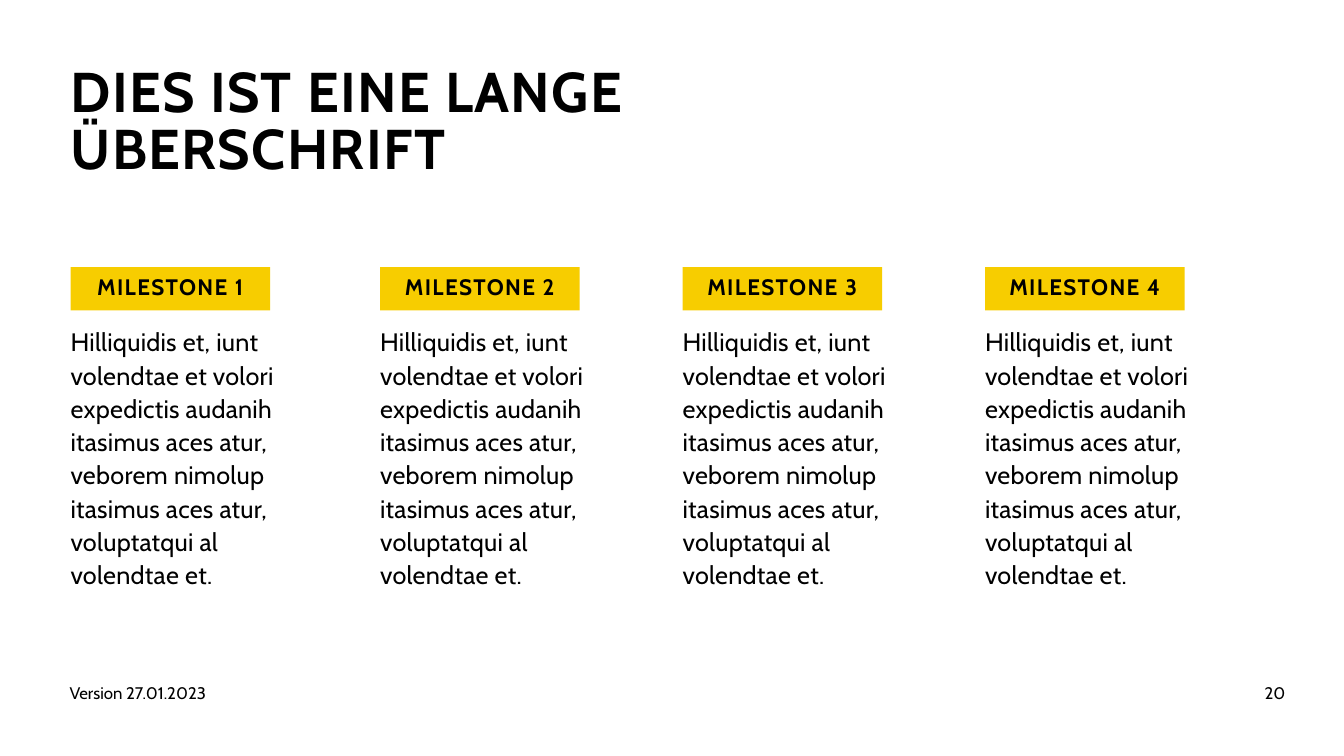
from pptx import Presentation
from pptx.dml.color import RGBColor
from pptx.enum.shapes import MSO_SHAPE
from pptx.enum.text import MSO_ANCHOR, MSO_AUTO_SIZE, PP_ALIGN
from pptx.util import Inches, Pt

COLORS = {"text": "000000", "accent": "F7CD00", "background": "FFFFFF"}
MARGIN = 0.7
COLUMN_LEFTS = [MARGIN] + [3.77 + 3 * step for step in range(3)]
DESCRIPTION = (
    "Hilliquidis et, iunt volendtae et volori expedictis audanih "
    "itasimus aces atur, veborem nimolup itasimus aces atur, "
    "voluptatqui al volendtae et."
)


class SlideBuilder:
    font_name = "Cabin"

    def __init__(self, presentation):
        self.slide = presentation.slides.add_slide(presentation.slide_layouts[5])
        background = self.slide.background.fill
        background.solid()
        background.fore_color.rgb = self.color("background")

    def color(self, name):
        return RGBColor.from_string(COLORS[name])

    def set_text(self, shape, text, size, bold=False, tracking=0, line_spacing=1.0,
                 align=PP_ALIGN.LEFT, anchor=MSO_ANCHOR.TOP):
        """Fill a shape with one paragraph; tracking is letter spacing in points."""
        frame = shape.text_frame
        frame.text = text
        frame.word_wrap = True
        frame.auto_size = MSO_AUTO_SIZE.NONE
        frame.vertical_anchor = anchor
        frame.margin_left = frame.margin_right = 0
        frame.margin_top = frame.margin_bottom = 0
        paragraph = frame.paragraphs[0]
        paragraph.alignment = align
        paragraph.line_spacing = line_spacing
        for run in paragraph.runs:
            font = run.font
            font.name = self.font_name
            font.size = Pt(size)
            font.bold = bold
            font.color.rgb = self.color("text")
            if tracking:
                run._r.get_or_add_rPr().set("spc", str(round(tracking * 100)))

    def title(self, text, left, top, width, height):
        shape = self.slide.shapes.title
        shape.left, shape.top = Inches(left), Inches(top)
        shape.width, shape.height = Inches(width), Inches(height)
        self.set_text(shape, text, 40, bold=True, tracking=1, line_spacing=0.85)

    def text(self, text, left, top, width, height, size, **style):
        shape = self.slide.shapes.add_textbox(
            Inches(left), Inches(top), Inches(width), Inches(height))
        self.set_text(shape, text, size, **style)

    def label(self, text, left, top, width, height):
        shape = self.slide.shapes.add_shape(
            MSO_SHAPE.RECTANGLE,
            Inches(left), Inches(top), Inches(width), Inches(height))
        shape.shadow.inherit = False
        shape.fill.solid()
        shape.fill.fore_color.rgb = self.color("accent")
        shape.line.fill.background()
        self.set_text(shape, text, 16, bold=True, tracking=1, line_spacing=0.85,
                      align=PP_ALIGN.CENTER, anchor=MSO_ANCHOR.MIDDLE)


def main():
    presentation = Presentation()
    presentation.slide_width = Inches(13.33)
    presentation.slide_height = Inches(7.5)

    builder = SlideBuilder(presentation)
    builder.title("DIES IST EINE LANGE ÜBERSCHRIFT", MARGIN, 0.66, 8.2, 1.12)
    for number, left in enumerate(COLUMN_LEFTS, start=1):
        builder.text(DESCRIPTION, left, 3.21, 2.41, 3.09, 18,
                     tracking=0.2, line_spacing=1.1)
        builder.label(f"MILESTONE {number}", left, 2.65, 1.98, 0.43)
    builder.text("Version 27.01.2023", 0.69, 6.77, 8.23, 0.4, 12)
    builder.text("20", 10.6, 6.77, 2.15, 0.4, 12, align=PP_ALIGN.RIGHT)

    presentation.save("out.pptx")


if __name__ == "__main__":
    main()
